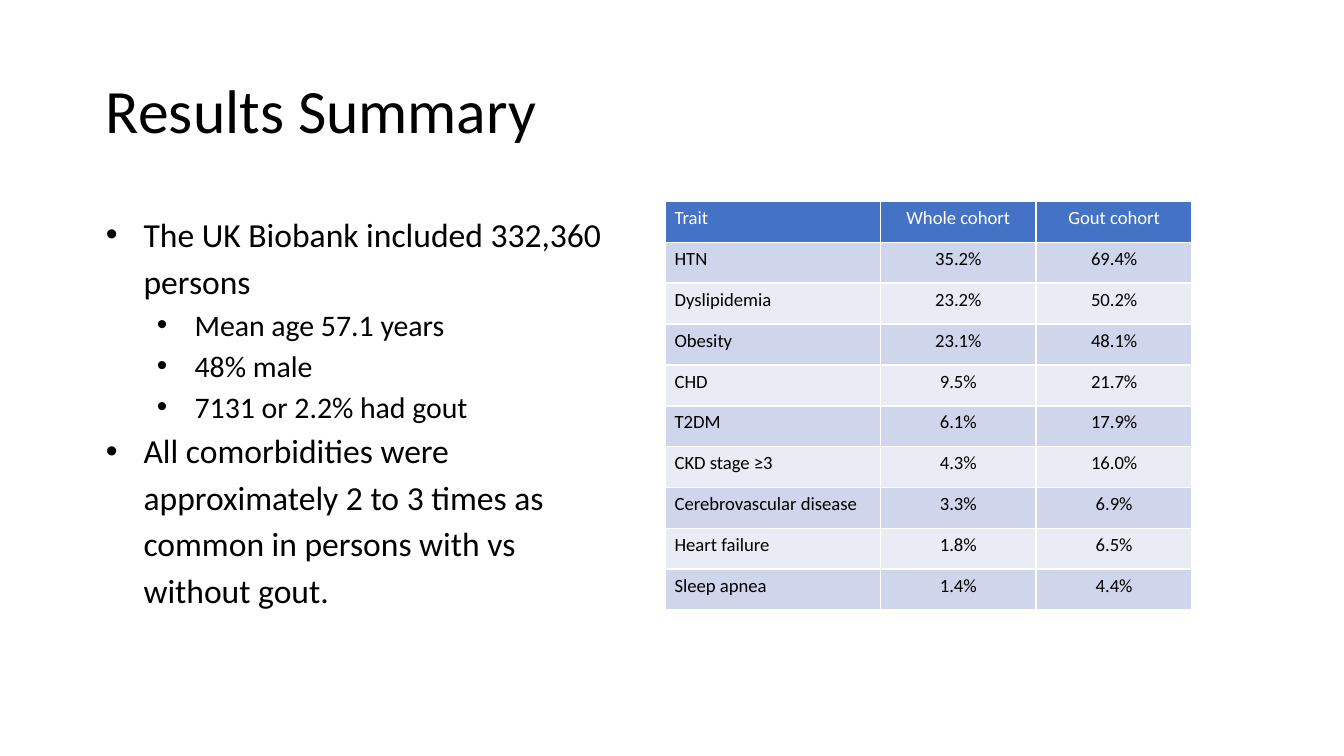
"""Build the results summary slide with key findings and a comorbidity table."""
from dataclasses import dataclass

from pptx import Presentation
from pptx.dml.color import RGBColor as RGB
from pptx.enum.text import MSO_ANCHOR as Anchor, PP_ALIGN as Align
from pptx.oxml import parse_xml
from pptx.oxml.ns import nsdecls
from pptx.util import Inches, Pt

TITLE = "Results Summary"
FINDINGS = [
    (0, "The UK Biobank included 332,360 persons"),
    (1, "Mean age 57.1 years"),
    (1, "48% male"),
    (1, "7131 or 2.2% had gout"),
    (0, "All comorbidities were approximately 2 to 3 times as common in persons with vs without gout."),
]
PREVALENCE = [
    ("Trait", "Whole cohort", "Gout cohort"),
    ("HTN", "35.2%", "69.4%"),
    ("Dyslipidemia", "23.2%", "50.2%"),
    ("Obesity", "23.1%", "48.1%"),
    ("CHD", "9.5%", "21.7%"),
    ("T2DM", "6.1%", "17.9%"),
    ("CKD stage ≥3", "4.3%", "16.0%"),
    ("Cerebrovascular disease", "3.3%", "6.9%"),
    ("Heart failure", "1.8%", "6.5%"),
    ("Sleep apnea", "1.4%", "4.4%"),
]
SLIDE_WIDTH = 10
SLIDE_HEIGHT = SLIDE_WIDTH * 9 / 16
COLUMN_WIDTHS = (1.6, 1.16, 1.16)
TABLE_HEIGHT = 3.04
INDENTS = (0.28, 0.66)
HANGING = 0.28


@dataclass(frozen=True)
class Theme:
    font: str = "Calibri"
    ink: str = "000000"
    white: str = "FFFFFF"
    header: str = "4472C4"
    bands: tuple = ("CFD5EA", "E9EBF5")
    title_size: int = 33
    finding_sizes: tuple = (18, 16)
    cell_size: int = 10
    rule: int = 1


THEME = Theme()


def style(paragraph, size, color):
    for run in paragraph.runs:
        run.font.name = THEME.font
        run.font.size = Pt(size)
        run.font.bold = False
        run.font.color.rgb = RGB.from_string(color)


def add_text(slide, left, top, width, height, anchor):
    frame = slide.shapes.add_textbox(*map(Inches, (left, top, width, height))).text_frame
    frame.word_wrap = True
    frame.vertical_anchor = anchor
    return frame


def add_title(slide):
    heading = add_text(slide, 0.69, 0.3, 8.62, 1.09, Anchor.MIDDLE)
    heading.text = TITLE
    heading.paragraphs[0].line_spacing = 0.9
    style(heading.paragraphs[0], THEME.title_size, THEME.ink)


def add_findings(slide):
    findings = add_text(slide, 0.69, 1.5, 3.9, 3.57, Anchor.TOP)
    findings.text = "\n".join(text for _, text in FINDINGS)
    for (level, _), finding in zip(FINDINGS, findings.paragraphs):
        finding.level = level
        finding.line_spacing = 1.15
        props = finding._p.get_or_add_pPr()
        props.set("marL", str(Inches(INDENTS[level])))
        props.set("indent", str(-Inches(HANGING)))
        props.append(parse_xml(f'<a:buFont {nsdecls("a")} typeface="Arial"/>'))
        props.append(parse_xml(f'<a:buChar {nsdecls("a")} char="•"/>'))
        style(finding, THEME.finding_sizes[level], THEME.ink)


def add_borders(cell):
    props = cell._tc.get_or_add_tcPr()
    for side in "LRTB":
        props.append(parse_xml(
            f'<a:ln{side} {nsdecls("a")} w="{Pt(THEME.rule)}"><a:solidFill>'
            f'<a:srgbClr val="{THEME.white}"/></a:solidFill></a:ln{side}>'))


def add_prevalence(slide):
    rows, columns = len(PREVALENCE), len(COLUMN_WIDTHS)
    prevalence = slide.shapes.add_table(
        rows, columns, Inches(4.95), Inches(1.5),
        Inches(sum(COLUMN_WIDTHS)), Inches(TABLE_HEIGHT)).table
    for column, width in zip(prevalence.columns, COLUMN_WIDTHS):
        column.width = Inches(width)
    for r, values in enumerate(PREVALENCE):
        is_header = r == 0
        fill = THEME.header if is_header else THEME.bands[(r - 1) % 2]
        for c, value in enumerate(values):
            cell = prevalence.cell(r, c)
            cell.text = value
            cell.margin_left = cell.margin_right = Inches(0.07)
            cell.margin_top = cell.margin_bottom = Inches(0.04)
            add_borders(cell)
            cell.fill.solid()
            cell.fill.fore_color.rgb = RGB.from_string(fill)
            entry = cell.text_frame.paragraphs[0]
            entry.alignment = Align.CENTER if c else Align.LEFT
            style(entry, THEME.cell_size, THEME.white if is_header else THEME.ink)


def main():
    deck = Presentation()
    deck.slide_width, deck.slide_height = Inches(SLIDE_WIDTH), Inches(SLIDE_HEIGHT)
    slide = deck.slides.add_slide(deck.slide_layouts[6])
    add_title(slide)
    add_findings(slide)
    add_prevalence(slide)
    deck.save("out.pptx")


if __name__ == "__main__":
    main()
